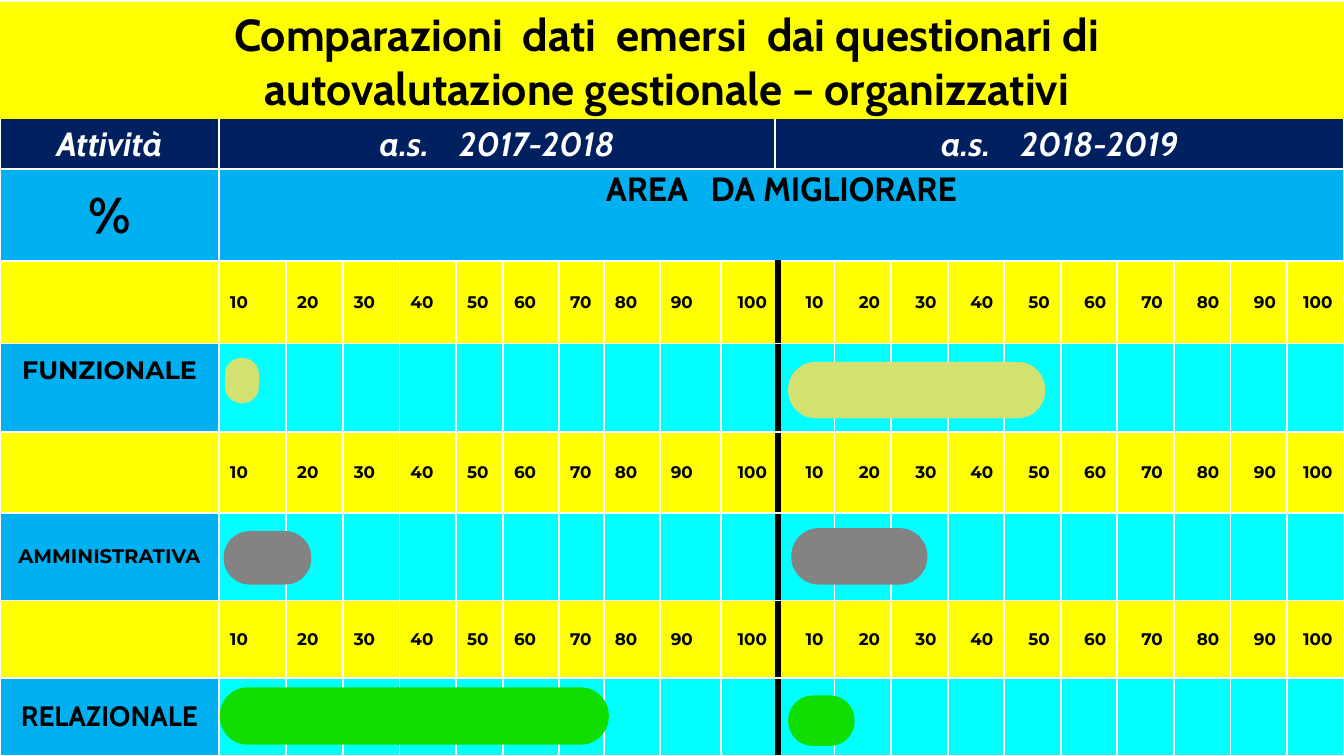
from dataclasses import dataclass
from lxml.etree import SubElement
from pptx import Presentation
from pptx.dml.color import RGBColor as RGB
from pptx.enum.shapes import MSO_SHAPE as SHAPE
from pptx.enum.text import MSO_ANCHOR as ANCHOR, PP_ALIGN as ALIGN
from pptx.oxml.ns import qn
from pptx.util import Pt


@dataclass(frozen=True)
class Theme:
    black: str = "000000"
    white: str = "FFFFFF"
    navy: str = "002060"
    blue: str = "00B0F0"
    yellow: str = "FFFF00"
    cyan: str = "00FFFF"
    olive: str = "D3E171"
    grey: str = "838383"
    green: str = "10DE00"
    display: str = "Cabin"
    body: str = "Montserrat"
    title: int = 32
    percent: int = 36
    heading: int = 24
    tick: int = 12
    grid: float = 1.5
    divider: float = 4.5


T = Theme()
WIDTH, HEIGHT = 960, 540
LABEL_W = 156.4
TICK_W = [48, 40.5, 40.5, 40.5, 33.5, 40, 32, 40, 44, 40.5]
HALF = LABEL_W + sum(TICK_W)
COLS = [LABEL_W] + TICK_W + [(WIDTH - HALF) / 10] * 10
ROWS = [65.5, 59, 63.4, 57.6, 62.6, 55.4, 55.4]
INSETS = {"margin_left": Pt(7.9), "margin_right": Pt(7.9),
          "margin_top": Pt(4.3), "margin_bottom": Pt(4.3)}
NO_INSETS = dict.fromkeys(INSETS, 0)
AREAS = [
    ("FUNZIONALE", 18, T.body, ANCHOR.TOP, 8),
    ("AMMINISTRATIVA", 14, T.body, ANCHOR.MIDDLE, 4.3),
    ("RELAZIONALE", 20, T.display, ANCHOR.MIDDLE, 4.3),
]
BARS = [
    (T.grey, 159.8, 379.4, 62.6, 38.2),
    (T.grey, 565.2, 377.3, 97.2, 40.3),
    (T.green, 157, 491, 277.9, 41),
    (T.green, 563, 496.8, 47.5, 36),
    (T.olive, 563, 258.5, 183.6, 40.3),
    (T.olive, 160.6, 255.6, 24.5, 32.4),
]


def set_attrs(obj, values):
    for name, value in values.items():
        setattr(obj, name, value)


def write(tf, text, size, font=T.display, color=T.black, align=ALIGN.CENTER, italic=False):
    p = tf.paragraphs[0]
    p.text = text
    p.alignment = align
    for r in p.runs:
        set_attrs(r.font, {"size": Pt(size), "name": font, "bold": True, "italic": italic})
        r.font.color.rgb = RGB.from_string(color)


def add_shape(slide, kind, color, left, top, width, height):
    s = slide.shapes.add_shape(kind, Pt(left), Pt(top), Pt(width), Pt(height))
    s.shadow.inherit = False
    s.fill.solid()
    s.fill.fore_color.rgb = RGB.from_string(color)
    s.line.fill.background()
    return s


def add_title(slide, text):
    s = add_shape(slide, SHAPE.RECTANGLE, T.yellow, 0, 1.4, WIDTH, 83.5)
    set_attrs(s.text_frame, {"word_wrap": True, "vertical_anchor": ANCHOR.MIDDLE})
    write(s.text_frame, text, T.title)


def add_bar(slide, *bar):
    s = add_shape(slide, SHAPE.ROUNDED_RECTANGLE, *bar)
    s.adjustments[0] = 0.49


def add_grid(slide, top, cols, rows):
    frame = slide.shapes.add_table(len(rows), len(cols), 0, Pt(top), Pt(WIDTH), Pt(sum(rows)))
    table = frame.table
    set_attrs(table, {"first_row": False, "horz_banding": False})
    for col, width in zip(table.columns, cols):
        col.width = Pt(width)
    for row, height in zip(table.rows, rows):
        row.height = Pt(height)
    return table


def style_cell(cell, fill, black_side=None, insets=INSETS, anchor=ANCHOR.MIDDLE):
    set_attrs(cell, {**insets, "vertical_anchor": anchor})
    tc_pr = cell._tc.get_or_add_tcPr()
    for side in ("lnL", "lnR", "lnT", "lnB"):
        black = side == black_side
        width = T.divider if black else T.grid
        ln = SubElement(tc_pr, qn(f"a:{side}"), w=str(Pt(width)))
        solid = SubElement(ln, qn("a:solidFill"))
        SubElement(solid, qn("a:srgbClr"), val=T.black if black else T.white)
    cell.fill.solid()
    cell.fill.fore_color.rgb = RGB.from_string(fill)


def add_years(slide):
    table = add_grid(slide, 84.4, [LABEL_W, HALF - LABEL_W - 2, WIDTH - HALF + 2], [36.5])
    for cell, text in zip(table.rows[0].cells,
                          ["Attività", "a.s.    2017-2018", "a.s.    2018-2019"]):
        style_cell(cell, T.navy, anchor=ANCHOR.TOP)
        write(cell.text_frame, text, T.heading, color=T.white, italic=True)


def fill_row(table, row, label_fill, fill, ticks):
    style_cell(table.cell(row, 0), label_fill)
    for col in range(1, 21):
        cell = table.cell(row, col)
        style_cell(cell, fill, {10: "lnR", 11: "lnL"}.get(col))
        if ticks:
            align = ALIGN.LEFT if col < 10 else ALIGN.RIGHT
            write(cell.text_frame, str((col - 1) % 10 * 10 + 10), T.tick, T.body, align=align)


def add_areas(slide):
    table = add_grid(slide, 120.9, COLS, ROWS)
    for col in range(21):
        anchor = ANCHOR.TOP if col else ANCHOR.MIDDLE
        style_cell(table.cell(0, col), T.blue, insets=NO_INSETS, anchor=anchor)
    table.cell(0, 1).merge(table.cell(0, 20))
    write(table.cell(0, 0).text_frame, "%", T.percent)
    write(table.cell(0, 1).text_frame, "AREA   DA MIGLIORARE", T.heading)
    for i, (name, size, font, anchor, margin) in enumerate(AREAS):
        row = 2 * i + 1
        fill_row(table, row, T.yellow, T.yellow, True)
        fill_row(table, row + 1, T.blue, T.cyan, False)
        cell = table.cell(row + 1, 0)
        set_attrs(cell, {"vertical_anchor": anchor, "margin_top": Pt(margin)})
        write(cell.text_frame, name, size, font)


def main():
    prs = Presentation()
    set_attrs(prs, {"slide_width": Pt(WIDTH), "slide_height": Pt(HEIGHT)})
    slide = prs.slides.add_slide(prs.slide_layouts[6])
    add_years(slide)
    add_areas(slide)
    add_title(slide, "Comparazioni  dati  emersi  dai questionari di \v"
                     "autovalutazione gestionale – organizzativi ")
    for bar in BARS:
        add_bar(slide, *bar)
    prs.save("out.pptx")


if __name__ == "__main__":
    main()
